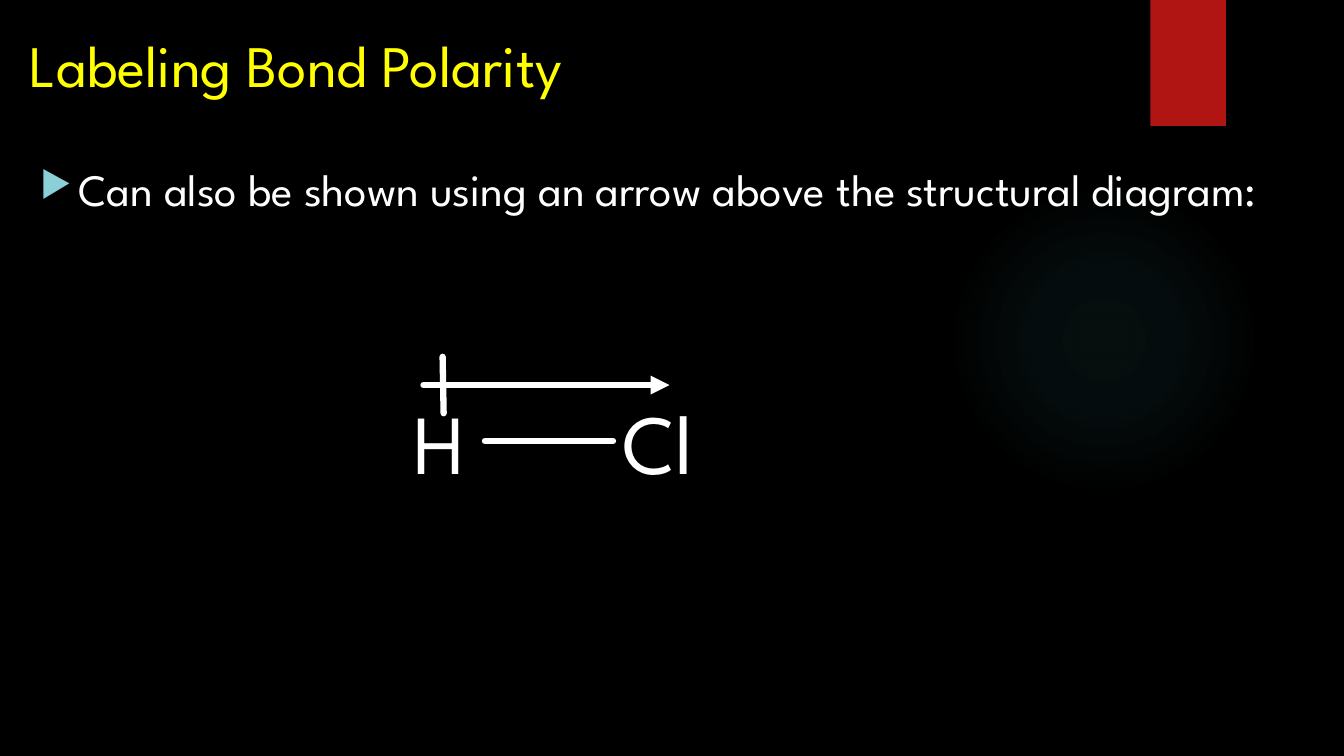
from pptx import Presentation
from pptx.dml.color import RGBColor
from pptx.enum import shapes, text
from pptx.oxml import parse_xml
from pptx.oxml.ns import nsdecls, qn
from pptx.util import Inches, Pt
from lxml import etree

BLACK = RGBColor(0x00, 0x00, 0x00)
WHITE = RGBColor(0xFF, 0xFF, 0xFF)
YELLOW = RGBColor(0xFF, 0xFF, 0x00)
RED = RGBColor(0xB0, 0x15, 0x13)
FONT = "League Spartan"


def set_text(sp, words, size, color):
    tf = sp.text_frame
    tf.text = words
    p = tf.paragraphs[0]
    p.alignment = text.PP_ALIGN.LEFT
    f = p.runs[0].font
    f.name, f.size, f.color.rgb = FONT, Pt(size), color
    return p


def add_line(parent, x1, y1, x2, y2, arrow=False):
    c = parent.add_connector(shapes.MSO_CONNECTOR.STRAIGHT,
                             Inches(x1), Inches(y1), Inches(x2), Inches(y2))
    c.line.color.rgb = WHITE
    c.line.width = Pt(4.5)
    ln = c.line._get_or_add_ln()
    ln.set("cap", "rnd")
    if arrow:
        etree.SubElement(ln, qn("a:tailEnd"), type="triangle")
    etree.SubElement(c._element.spPr, qn("a:effectLst"))
    return c


prs = Presentation()
prs.slide_width, prs.slide_height = Inches(13.33), Inches(7.5)
s = prs.slides.add_slide(prs.slide_layouts[5])
s.background.fill.solid()
s.background.fill.fore_color.rgb = BLACK

# Soft teal glow
glow = s.shapes.add_shape(shapes.MSO_SHAPE.OVAL, Inches(9.41), Inches(1.83),
                          Inches(3.08), Inches(3.08))
glow.shadow.inherit = False
glow.line.fill.background()
stops = "".join(
    f'<a:gs pos="{pos * 1000}"><a:srgbClr val="50B9C1">'
    f'<a:alpha val="{alpha * 1000}"/></a:srgbClr></a:gs>'
    for pos, alpha in [(0, 7), (36, 6), (69, 0)])
glow._element.spPr.find(qn("a:prstGeom")).addnext(parse_xml(
    f'<a:gradFill {nsdecls("a")}><a:gsLst>{stops}</a:gsLst><a:path path="circle">'
    '<a:fillToRect l="50000" t="50000" r="50000" b="50000"/></a:path></a:gradFill>'))

# Red tab
tab = s.shapes.add_shape(shapes.MSO_SHAPE.RECTANGLE, Inches(11.41), 0,
                         Inches(0.75), Inches(1.25))
tab.shadow.inherit = False
tab.fill.solid()
tab.fill.fore_color.rgb = RED
tab.line.fill.background()

# Title
title = s.shapes.title
title.left, title.top = Inches(0.19), Inches(0.19)
title.width, title.height = Inches(6.53), Inches(0.89)
title.text_frame.vertical_anchor = text.MSO_ANCHOR.MIDDLE
set_text(title, "Labeling Bond Polarity", 42, YELLOW)

# Bulleted statement
body = s.shapes.add_textbox(Inches(0.3), Inches(1.56), Inches(12.71), Inches(1.25))
body.text_frame.word_wrap = True
p = set_text(body, "Can also be shown using an arrow above the structural diagram:",
             32, WHITE)
pPr = p._p.get_or_add_pPr()
pPr.set("marL", str(Inches(0.38)))
pPr.set("indent", str(-Inches(0.38)))
clr = etree.SubElement(pPr, qn("a:buClr"))
etree.SubElement(clr, qn("a:srgbClr"), val="8AD0D6")
etree.SubElement(pPr, qn("a:buSzPct"), val="80000")
etree.SubElement(pPr, qn("a:buChar"), char="▶")

# Atoms and the bond between them
atoms = []
for symbol, x, w in [("H", 4, 0.81), ("Cl", 6.08, 1.11)]:
    atom = s.shapes.add_textbox(Inches(x), Inches(3.82), Inches(w), Inches(1.11))
    set_text(atom, symbol, 60, WHITE)
    atoms.append(atom)
bond = add_line(s.shapes, 4.81, 4.37, 6.08, 4.37)
bond.begin_connect(atoms[0], 3)
bond.end_connect(atoms[1], 1)

# Dipole arrow with its plus mark
dipole = s.shapes.add_group_shape()
add_line(dipole.shapes, 4.2, 3.82, 6.64, 3.82, arrow=True)
add_line(dipole.shapes, 4.39, 3.54, 4.4, 4.1)

prs.save("out.pptx")
